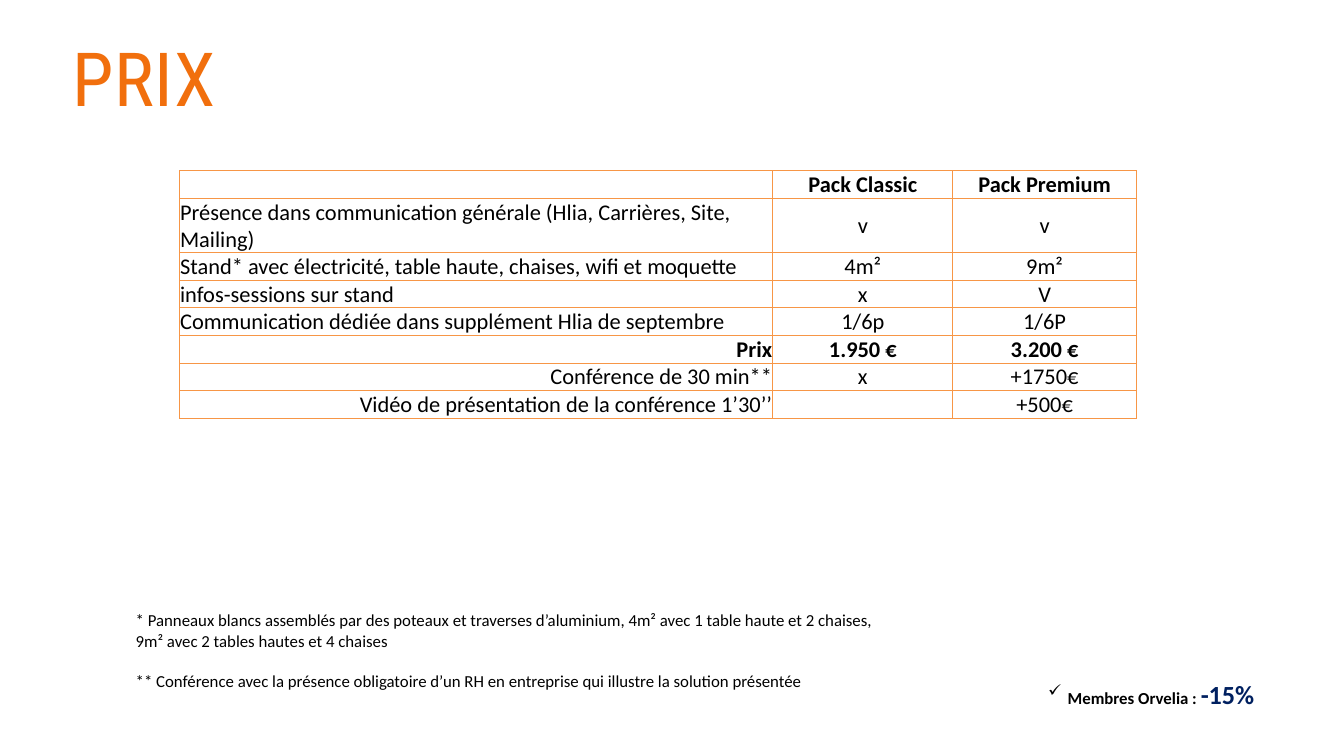
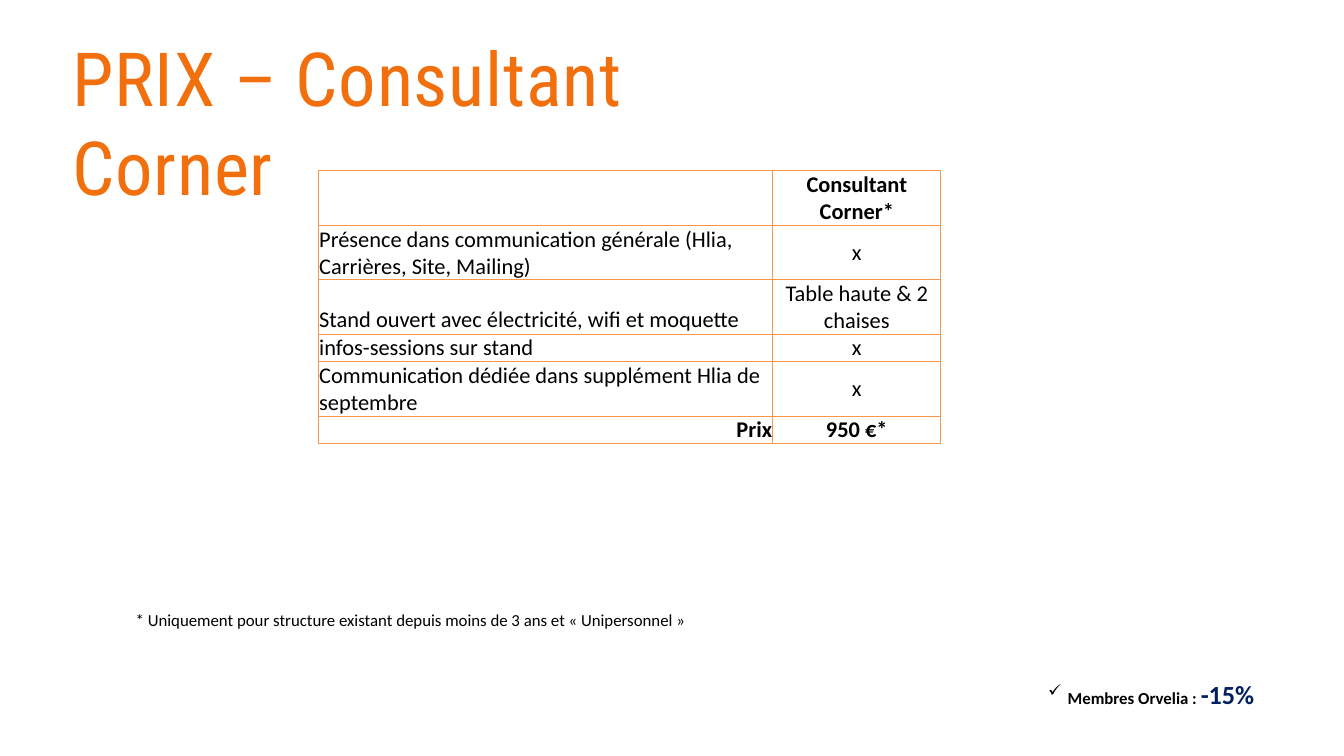
from dataclasses import dataclass

from lxml import etree
from pptx import Presentation
from pptx.dml.color import RGBColor
from pptx.enum.text import MSO_ANCHOR, MSO_AUTO_SIZE, PP_ALIGN
from pptx.oxml.ns import qn
from pptx.util import Inches, Pt

LEFT, CENTER, RIGHT = PP_ALIGN.LEFT, PP_ALIGN.CENTER, PP_ALIGN.RIGHT
TOP, MIDDLE, BOTTOM = MSO_ANCHOR.TOP, MSO_ANCHOR.MIDDLE, MSO_ANCHOR.BOTTOM
GROW = MSO_AUTO_SIZE.SHAPE_TO_FIT_TEXT

ORANGE = "F16F0D"
BORDER = "F79646"
NAVY = "002060"
BLACK = "000000"
WHITE = "FFFFFF"
BODY_FONT = "Calibri"
TITLE_FONT = "Roboto Condensed"
TITLE_ONLY_LAYOUT = 5
TABLE_TOP = 2.54
ONE_LINE, TWO_LINES = 0.41, 0.81


@dataclass(frozen=True)
class PriceRow:
    label: str
    values: tuple[str, ...]
    height: float = ONE_LINE
    align: PP_ALIGN = LEFT
    anchor: MSO_ANCHOR = BOTTOM
    bold: bool = False


@dataclass(frozen=True)
class PriceSlide:
    title: str
    title_width: float
    table_left: float
    columns: tuple[float, ...]
    rows: tuple[PriceRow, ...]
    conditions: tuple[tuple[str, ...], ...]
    conditions_area: tuple[float, float]


PRESENCE = "Présence dans communication générale (Hlia, Carrières, Site, Mailing)"
SESSIONS = "infos-sessions sur stand"
SUPPLEMENT = "Communication dédiée dans supplément Hlia de septembre"

PRICE_SLIDES = (
    PriceSlide(
        "PRIX", 7.31, 2.67, (8.83, 2.68, 2.73),
        (
            PriceRow("", ("Pack Classic", "Pack Premium"), bold=True),
            PriceRow(PRESENCE, ("v", "v"), TWO_LINES),
            PriceRow("Stand* avec électricité, table haute, chaises, wifi et moquette",
                     ("4m²", "9m²")),
            PriceRow(SESSIONS, ("x", "V")),
            PriceRow(SUPPLEMENT, ("1/6p", "1/6P"), anchor=MIDDLE),
            PriceRow("Prix", ("1.950 €", "3.200 €"), align=RIGHT, bold=True),
            PriceRow("Conférence de 30 min**", ("x", "+1750€"), align=RIGHT),
            PriceRow("Vidéo de présentation de la conférence 1’30’’", ("", "+500€"), align=RIGHT),
        ),
        (
            ("* Panneaux blancs assemblés par des poteaux et traverses d’aluminium, "
             "4m² avec 1 table haute et 2 chaises,",
             "9m² avec 2 tables hautes et 4 chaises"),
            ("** Conférence avec la présence obligatoire d’un RH en entreprise "
             "qui illustre la solution présentée",),
        ),
        (11.29, 1.62),
    ),
    PriceSlide(
        "PRIX – Consultant Corner", 8.58, 4.74, (6.76, 2.5),
        (
            PriceRow("", ("Consultant Corner*",), TWO_LINES, bold=True),
            PriceRow(PRESENCE, ("x",), TWO_LINES),
            PriceRow("Stand ouvert avec électricité, wifi et moquette",
                     ("Table haute & 2 chaises",), TWO_LINES),
            PriceRow(SESSIONS, ("x",)),
            PriceRow(SUPPLEMENT, ("x",), TWO_LINES, anchor=MIDDLE),
            PriceRow("Prix", ("950 €*",), align=RIGHT, bold=True),
        ),
        (("* Uniquement pour structure existant depuis moins de 3 ans et « Unipersonnel »",),),
        (8.48, 0.4),
    ),
)


def color(value: str) -> RGBColor:
    return RGBColor.from_string(value)


def add_run(paragraph, text: str, size: float, fill: str = BLACK,
            bold: bool = False, font: str = BODY_FONT):
    run = paragraph.add_run()
    run.text = text
    run.font.name = font
    run.font.size = Pt(size)
    run.font.bold = bold
    run.font.color.rgb = color(fill)
    return run


def add_title(slide, text: str, width: float) -> None:
    title = slide.shapes.title
    title.left, title.top = Inches(1.08), Inches(0.47)
    title.width, title.height = Inches(width), Inches(1.35)
    frame = title.text_frame
    frame.margin_left = frame.margin_top = frame.margin_right = frame.margin_bottom = 0
    frame.vertical_anchor = TOP
    frame.word_wrap = True
    frame.auto_size = GROW
    paragraph = frame.paragraphs[0]
    paragraph.alignment = LEFT
    paragraph.line_spacing = Pt(96)
    run = add_run(paragraph, text, 80, ORANGE, font=TITLE_FONT)
    run._r.get_or_add_rPr().set("spc", "80")


def add_text_box(slide, left: float, top: float, width: float, height: float):
    box = slide.shapes.add_textbox(Inches(left), Inches(top), Inches(width), Inches(height))
    box.text_frame.word_wrap = False
    box.text_frame.auto_size = GROW
    return box.text_frame


def add_conditions(slide, conditions: tuple[tuple[str, ...], ...],
                   area: tuple[float, float]) -> None:
    width, height = area
    frame = add_text_box(slide, 1.92, 9.03, width, height)
    for index, lines in enumerate(conditions):
        paragraph = frame.add_paragraph() if index else frame.paragraphs[0]
        if index:
            paragraph.space_before = Pt(22)
        for line_index, line in enumerate(lines):
            if line_index:
                paragraph.add_line_break()
            add_run(paragraph, line, 18)


def add_member_discount(slide) -> None:
    paragraph = add_text_box(slide, 15.5, 10.04, 3.3, 0.57).paragraphs[0]
    properties = paragraph._p.get_or_add_pPr()
    properties.set("marL", str(Inches(0.29)))
    properties.set("indent", str(-Inches(0.29)))
    etree.SubElement(properties, qn("a:buChar"), char="✓")
    add_run(paragraph, "Membres Orvelia : ", 18, bold=True)
    add_run(paragraph, "-15%", 28, NAVY, bold=True)


def add_borders(cell) -> None:
    properties = cell._tc.get_or_add_tcPr()
    for side in ("a:lnL", "a:lnR", "a:lnT", "a:lnB"):
        line = etree.SubElement(properties, qn(side), w=str(Pt(1)))
        fill = etree.SubElement(line, qn("a:solidFill"))
        etree.SubElement(fill, qn("a:srgbClr"), val=BORDER)


def fill_cell(cell, text: str, align: PP_ALIGN, anchor: MSO_ANCHOR, bold: bool) -> None:
    cell.margin_left = cell.margin_top = cell.margin_right = Inches(0.01)
    cell.margin_bottom = 0
    cell.vertical_anchor = anchor
    add_borders(cell)
    cell.fill.solid()
    cell.fill.fore_color.rgb = color(WHITE)
    if text:
        paragraph = cell.text_frame.paragraphs[0]
        paragraph.alignment = align
        add_run(paragraph, text, 24, bold=bold)


def add_price_table(slide, left: float, columns: tuple[float, ...],
                    rows: tuple[PriceRow, ...]) -> None:
    height = sum(row.height for row in rows)
    table = slide.shapes.add_table(len(rows), len(columns), Inches(left), Inches(TABLE_TOP),
                                   Inches(sum(columns)), Inches(height)).table
    table.first_row = table.horz_banding = False
    for column, width in zip(table.columns, columns):
        column.width = Inches(width)
    for index, row in enumerate(rows):
        table.rows[index].height = Inches(row.height)
        fill_cell(table.cell(index, 0), row.label, row.align, row.anchor, row.bold)
        for column_index, value in enumerate(row.values, start=1):
            fill_cell(table.cell(index, column_index), value, CENTER, MIDDLE, row.bold)


def main() -> None:
    presentation = Presentation()
    presentation.slide_width, presentation.slide_height = Inches(20), Inches(11.25)
    for content in PRICE_SLIDES:
        slide = presentation.slides.add_slide(presentation.slide_layouts[TITLE_ONLY_LAYOUT])
        add_price_table(slide, content.table_left, content.columns, content.rows)
        add_title(slide, content.title, content.title_width)
        add_member_discount(slide)
        add_conditions(slide, content.conditions, content.conditions_area)
    presentation.save("out.pptx")


if __name__ == "__main__":
    main()
